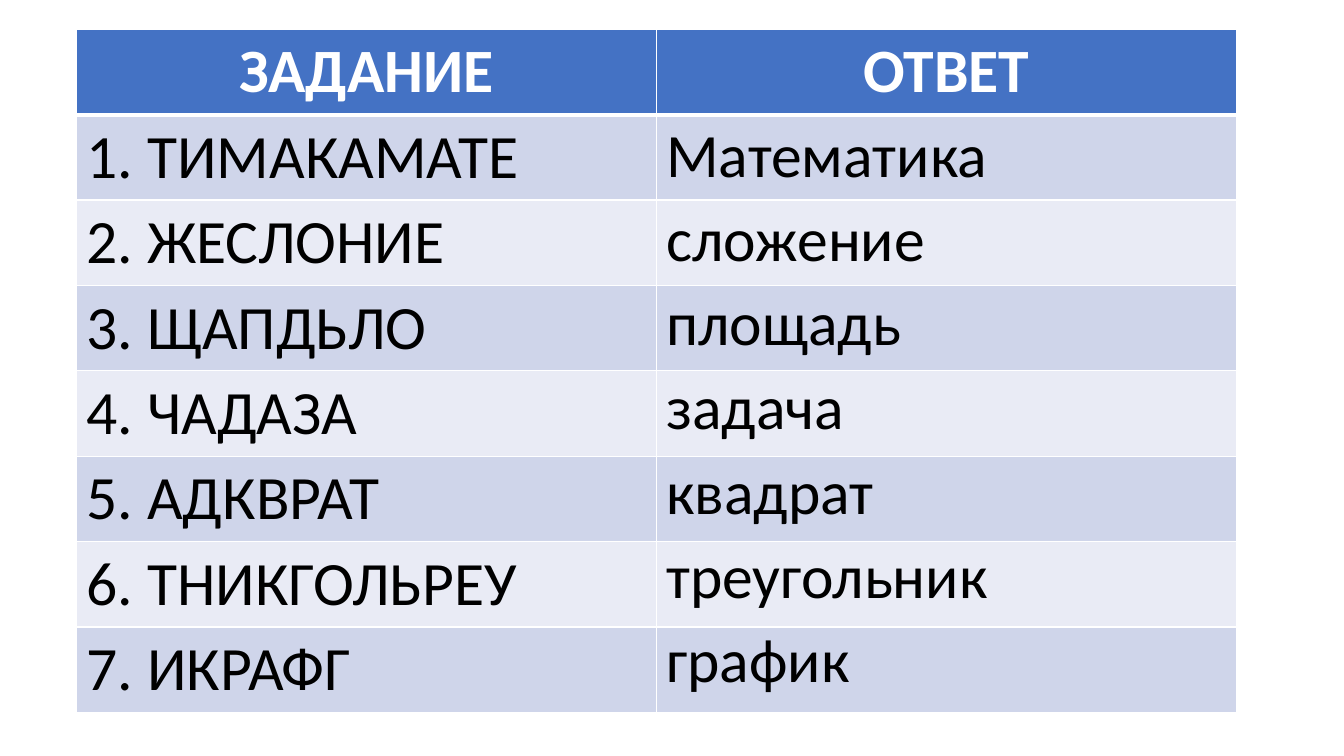
from lxml.etree import SubElement
from pptx import Presentation
from pptx.dml.color import RGBColor
from pptx.enum.text import MSO_AUTO_SIZE as AutoSize, PP_ALIGN as Align
from pptx.oxml.ns import qn
from pptx.util import Inches, Pt

COLORS = {
    "header": "4472C4",
    "odd_row": "CFD5EA",
    "even_row": "E9EBF5",
    "white": "FFFFFF",
    "black": "000000",
}
HEADINGS = ["ЗАДАНИЕ", "ОТВЕТ"]
PUZZLES = [
    ("ТИМАКАМАТЕ", "Математика"),
    ("ЖЕСЛОНИЕ", "сложение"),
    ("ЩАПДЬЛО", "площадь"),
    ("ЧАДАЗА", "задача"),
    ("АДКВРАТ", "квадрат"),
    ("ТНИКГОЛЬРЕУ", "треугольник"),
    ("ИКРАФГ", "график"),
]


def rgb(name):
    """Return the palette colour with this name."""
    return RGBColor.from_string(COLORS[name])


def write_text(frame, text, color="black", bold=False, align=Align.LEFT, size=44):
    """Write one formatted paragraph into a text frame."""
    paragraph = frame.paragraphs[0]
    paragraph.alignment = align
    run = paragraph.add_run()
    run.text = text
    run.font.name = "Calibri"
    run.font.size = Pt(size)
    run.font.bold = bold
    run.font.color.rgb = rgb(color)


def style_cell(cell, fill, top=1, bottom=1):
    """Give a cell white borders and a solid fill."""
    properties = cell._tc.get_or_add_tcPr()
    for side, width in (("L", 1), ("R", 1), ("T", top), ("B", bottom)):
        border = SubElement(properties, qn(f"a:ln{side}"), w=str(Pt(width)))
        solid = SubElement(border, qn("a:solidFill"))
        SubElement(solid, qn("a:srgbClr"), val=COLORS["white"])
    cell.fill.solid()
    cell.fill.fore_color.rgb = rgb(fill)


def add_puzzle_table(slide, left, top, width, height):
    """Draw the table with the headings and the scrambled words."""
    row_count = len(PUZZLES) + 1
    table = slide.shapes.add_table(
        row_count, len(HEADINGS),
        Inches(left), Inches(top), Inches(width), Inches(height),
    ).table
    for cell, heading in zip(table.rows[0].cells, HEADINGS):
        style_cell(cell, "header", bottom=3)
        write_text(cell.text_frame, heading, color="white", bold=True, align=Align.CENTER)
    for number, (scrambled, _) in enumerate(PUZZLES, 1):
        for cell in table.rows[number].cells:
            style_cell(cell, "odd_row" if number % 2 else "even_row",
                       top=3 if number == 1 else 1)
        write_text(table.cell(number, 0).text_frame, f"{number}. {scrambled}")


def add_answers(slide, left, top, width, height, line_height=0.84):
    """Spread the answers evenly down the box."""
    step = (height - line_height) / (len(PUZZLES) - 1)
    for index, (_, answer) in enumerate(PUZZLES):
        frame = slide.shapes.add_textbox(
            Inches(left), Inches(top + index * step),
            Inches(width), Inches(line_height),
        ).text_frame
        frame.word_wrap = True
        frame.auto_size = AutoSize.SHAPE_TO_FIT_TEXT
        write_text(frame, answer)


def main():
    """Build the slide and save it."""
    deck = Presentation()
    deck.slide_width, deck.slide_height = Inches(13.33), Inches(7.5)
    slide = deck.slides.add_slide(deck.slide_layouts[6])
    add_puzzle_table(slide, 0.76, 0.29, 11.5, 6.67)
    add_answers(slide, 6.51, 1.1, 5.75, 5.85)
    deck.save("out.pptx")


if __name__ == "__main__":
    main()
